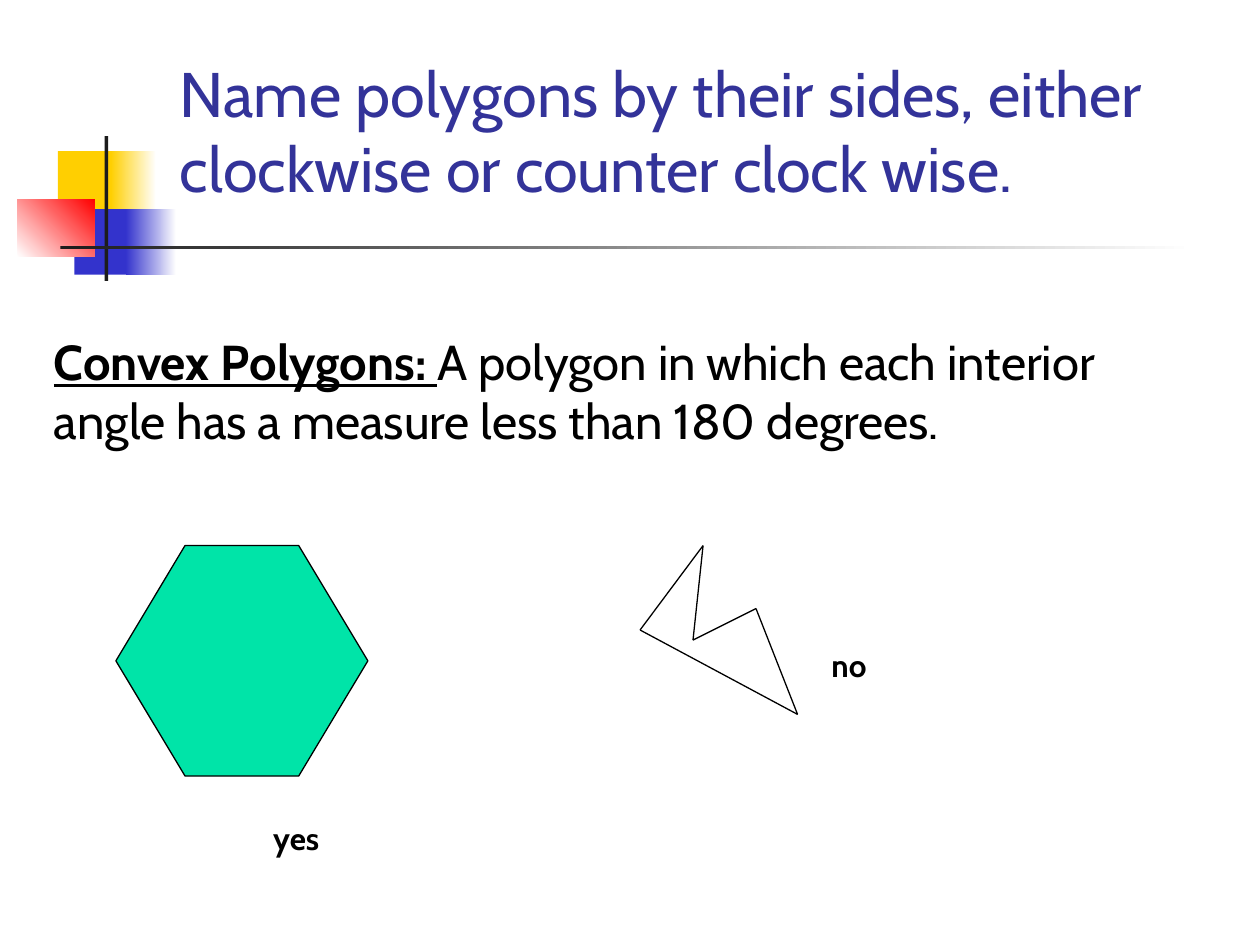
import pptx
import pptx.util
import pptx.dml.color
import pptx.enum.shapes
import pptx.enum.text
import pptx.oxml.ns
import lxml.etree

PX = 9144  # EMU in one px, at 100 px to the inch
FONT = "Cabin"
COLORS = {
    "white": "FFFFFF",
    "black": "000000",
    "title": "333399",
    "yellow": "FFCF01",
    "blue": "3333CC",
    "red": "FF0000",
    "bar": "1C1C1C",
    "green": "00E4A8",
}
SHAPES = pptx.enum.shapes.MSO_SHAPE
ANCHOR = pptx.enum.text.MSO_ANCHOR
AUTO_SIZE = pptx.enum.text.MSO_AUTO_SIZE


def color(name):
    return pptx.dml.color.RGBColor.from_string(COLORS[name])


def add_solid(page, kind, box, fill):
    shape = page.shapes.add_shape(kind, *(n * PX for n in box))
    shape.shadow.inherit = False
    shape.fill.solid()
    shape.fill.fore_color.rgb = color(fill)
    shape.line.fill.background()
    return shape


def add_fade(page, box, start, end, angle=0):
    shape = add_solid(page, SHAPES.RECTANGLE, box, start)
    shape.fill.gradient()
    shape.fill.gradient_angle = angle
    for stop, name in zip(shape.fill.gradient_stops, (start, end)):
        stop.color.rgb = color(name)


def add_text(page, box, runs, size, ink="black", anchor=ANCHOR.TOP,
             wrap=True, auto_size=AUTO_SIZE.SHAPE_TO_FIT_TEXT):
    """Place one paragraph; runs are (text, bold, underline)."""
    frame = page.shapes.add_textbox(*(n * PX for n in box)).text_frame
    frame.word_wrap = wrap
    frame.auto_size = auto_size
    frame.vertical_anchor = anchor
    para = frame.paragraphs[0]
    for text, bold, underline in runs:
        span = para.add_run()
        span.text = text
        span.font.name = FONT
        span.font.size = pptx.util.Pt(size)
        span.font.color.rgb = color(ink)
        span.font.bold = bold
        span.font.underline = underline


def add_edge(page, start, end):
    edge = page.shapes.add_connector(
        pptx.enum.shapes.MSO_CONNECTOR.STRAIGHT,
        *(n * PX for n in start + end))
    edge.line.color.rgb = color("black")
    edge.line.width = pptx.util.Pt(0.75)
    lxml.etree.SubElement(edge._element.spPr, pptx.oxml.ns.qn("a:effectLst"))


def draw_ornament(page, left, top):
    # Overlapping squares, each fading out
    add_solid(page, SHAPES.RECTANGLE, (left + 32, top + 12, 48, 52), "yellow")
    add_fade(page, (left + 74, top + 12, 36, 52), "yellow", "white")
    add_solid(page, SHAPES.RECTANGLE, (left + 45, top + 58, 46, 52), "blue")
    add_fade(page, (left + 86, top + 58, 40, 52), "blue", "white")
    add_fade(page, (left, top + 50, 61, 46), "white", "red", angle=45)
    # Crossing bars
    add_solid(page, SHAPES.RECTANGLE, (left + 69, top, 3, 115), "bar")
    add_fade(page, (left + 34, top + 87, 900, 3), "bar", "white")


def draw_heading(page, left, top, width, height):
    title = "Name polygons by their sides, either clockwise or counter clock wise."
    add_text(page, (left, top, width, height), [(title, False, False)], 36,
             "title", ANCHOR.BOTTOM, auto_size=AUTO_SIZE.NONE)


def draw_definition(page, left, top, width, height):
    meaning = "A polygon in which each interior angle has a measure less than 180 degrees."
    add_text(page, (left, top, width, height),
             [("Convex Polygons: ", True, True), (meaning, False, False)], 28)


def draw_convex_example(page, left, top, width, height):
    hexagon = add_solid(page, SHAPES.HEXAGON, (left, top, width, height), "green")
    hexagon.adjustments[0] = 0.3
    hexagon.line.color.rgb = color("black")
    hexagon.line.width = pptx.util.Pt(0.75)
    add_text(page, (left + 115, top + height + 29, 93, 40),
             [("yes", True, False)], 18)


def draw_concave_example(page, left, top):
    offsets = [(0, 67), (50, 0), (42, 75), (92, 50), (125, 134)]
    corners = [(left + x, top + y) for x, y in offsets]
    for start, end in zip(corners, corners[1:] + corners[:1]):
        add_edge(page, start, end)
    add_text(page, (left + 142, top + 75, 52, 40),
             [("no", True, False)], 18, wrap=False)


def main():
    deck = pptx.Presentation()
    deck.slide_width, deck.slide_height = 1000 * PX, 750 * PX
    page = deck.slides.add_slide(deck.slide_layouts[6])
    page.background.fill.solid()
    page.background.fill.fore_color.rgb = color("white")
    draw_ornament(page, 14, 108)
    draw_heading(page, 133, 33, 849, 135)
    draw_definition(page, 33, 258, 925, 103)
    draw_convex_example(page, 92, 433, 200, 183)
    draw_concave_example(page, 508, 433)
    deck.save("out.pptx")


if __name__ == "__main__":
    main()
